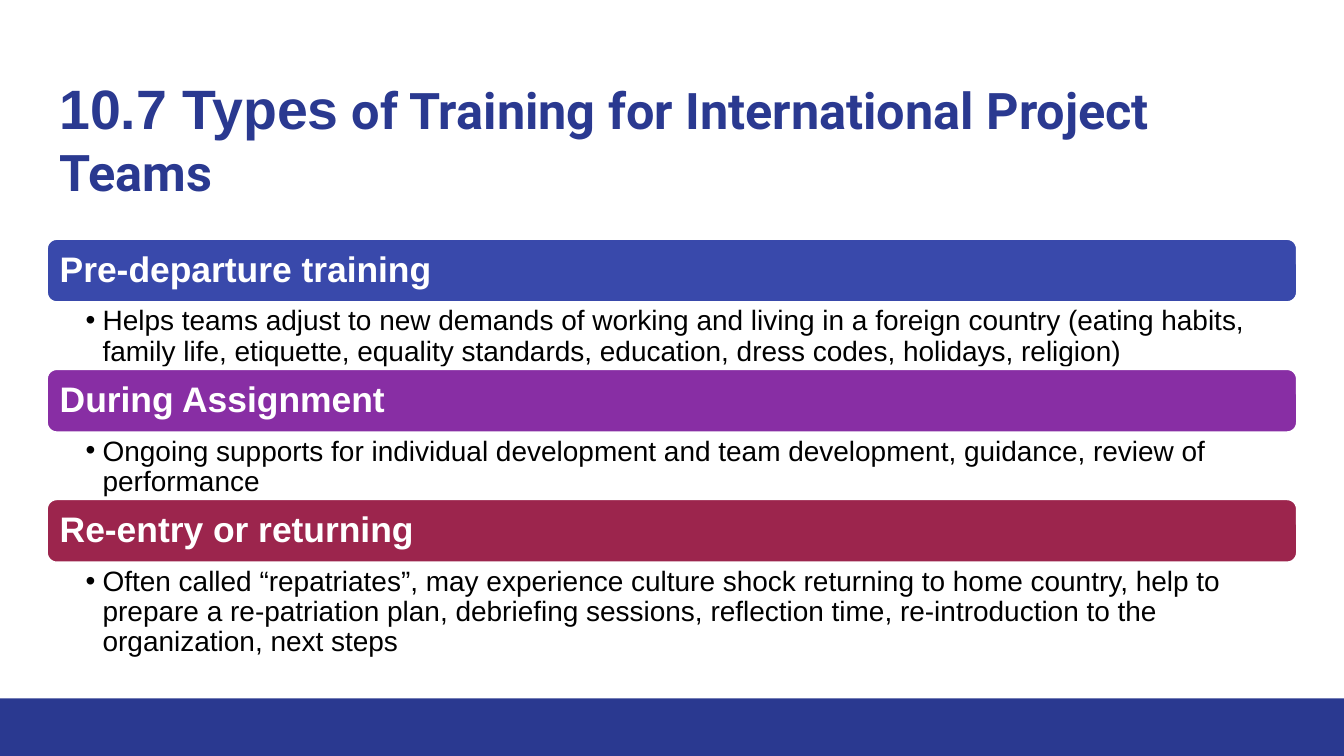
from dataclasses import dataclass

from lxml import etree
from pptx import Presentation
from pptx import util as u
from pptx.dml.color import RGBColor
from pptx.enum import shapes, text
from pptx.oxml import ns

TITLE = [("10.7 Types", "Arial", 29.7),
         (" of Training for International Project Teams", "Roboto", 27)]
STAGES = [
    ("Pre-departure training", "3949AB", 1.22,
     "Helps teams adjust to new demands of working and living in a foreign country "
     "(eating habits, family life, etiquette, equality standards, education, "
     "dress codes, holidays, religion)"),
    ("During Assignment", "882EA4", 1.22,
     "Ongoing supports for individual development and team development, guidance, "
     "review of performance"),
    ("Re-entry or returning", "9C254D", 1.8,
     "Often called “repatriates”, may experience culture shock returning to home country, "
     "help to prepare a re-patriation plan, debriefing sessions, reflection time, "
     "re-introduction to the organization, next steps"),
]


@dataclass(frozen=True)
class Theme:
    navy: str = "2A3990"
    white: str = "FFFFFF"
    black: str = "000000"
    font: str = "Arial"
    heading_size: float = 19
    detail_size: float = 15
    outline: float = 2


THEME = Theme()
WIDTH, HEIGHT = 25.4, 14.29
LEFT, CONTENT_WIDTH = 0.87, 23.66
FIRST_TOP, PITCH, BAR_HEIGHT = 4.5, 2.46, 1.23
FOOTER_HEIGHT = 1.09


def rgb(value):
    return RGBColor.from_string(value)


def add_span(para, words, font, size, color, bold=False):
    span = para.add_run()
    span.text = words
    span.font.name = font
    span.font.size = u.Pt(size)
    span.font.bold = bold
    span.font.color.rgb = rgb(color)


def set_frame(frame, anchor, left, top, right, bottom):
    frame.word_wrap = True
    frame.auto_size = text.MSO_AUTO_SIZE.NONE
    frame.vertical_anchor = anchor
    frame.margin_left, frame.margin_top = u.Cm(left), u.Cm(top)
    frame.margin_right, frame.margin_bottom = u.Cm(right), u.Cm(bottom)


def add_bar(page, kind, left, top, width, height, color):
    bar = page.shapes.add_shape(kind, u.Cm(left), u.Cm(top), u.Cm(width), u.Cm(height))
    bar.shadow.inherit = False
    bar.fill.solid()
    bar.fill.fore_color.rgb = rgb(color)
    bar.line.fill.background()
    return bar


def add_bullet(para):
    props = para._p.get_or_add_pPr()
    props.set("marL", str(u.Cm(0.32)))
    props.set("indent", str(u.Cm(-0.32)))
    etree.SubElement(props, ns.qn("a:buFont"), typeface=THEME.font)
    etree.SubElement(props, ns.qn("a:buChar"), char="•")


def add_title(page):
    title = page.shapes.title
    title.left, title.top = u.Cm(LEFT), u.Cm(1.15)
    title.width, title.height = u.Cm(CONTENT_WIDTH), u.Cm(1.68)
    set_frame(title.text_frame, text.MSO_ANCHOR.TOP, 0.25, 0.25, 0.25, 0.25)
    para = title.text_frame.paragraphs[0]
    para.alignment = text.PP_ALIGN.LEFT
    for words, font, size in TITLE:
        add_span(para, words, font, size, THEME.navy, True)


def add_stage(page, top, heading, color, detail_height, detail):
    bar = add_bar(page, shapes.MSO_SHAPE.ROUNDED_RECTANGLE,
                  LEFT, top, CONTENT_WIDTH, BAR_HEIGHT, color)
    bar.line.color.rgb = rgb(THEME.white)
    bar.line.width = u.Pt(THEME.outline)
    set_frame(bar.text_frame, text.MSO_ANCHOR.MIDDLE, 0.2, 0.2, 0.2, 0.2)
    para = bar.text_frame.paragraphs[0]
    para.alignment = text.PP_ALIGN.LEFT
    para.line_spacing = 0.9
    add_span(para, heading, THEME.font, THEME.heading_size, THEME.white, True)

    box = page.shapes.add_textbox(u.Cm(LEFT), u.Cm(top + BAR_HEIGHT),
                                  u.Cm(CONTENT_WIDTH), u.Cm(detail_height))
    set_frame(box.text_frame, text.MSO_ANCHOR.TOP, 0.75, 0.07, 0.38, 0.07)
    para = box.text_frame.paragraphs[0]
    para.level = 1
    para.line_spacing = 0.9
    add_bullet(para)
    add_span(para, detail, THEME.font, THEME.detail_size, THEME.black)


def main():
    deck = Presentation()
    deck.slide_width, deck.slide_height = u.Cm(WIDTH), u.Cm(HEIGHT)
    page = deck.slides.add_slide(deck.slide_layouts.get_by_name("Title Only"))
    add_bar(page, shapes.MSO_SHAPE.RECTANGLE,
            0, HEIGHT - FOOTER_HEIGHT, WIDTH, FOOTER_HEIGHT, THEME.navy)
    add_title(page)
    for index, stage in enumerate(STAGES):
        add_stage(page, FIRST_TOP + index * PITCH, *stage)
    deck.save("out.pptx")


if __name__ == "__main__":
    main()
